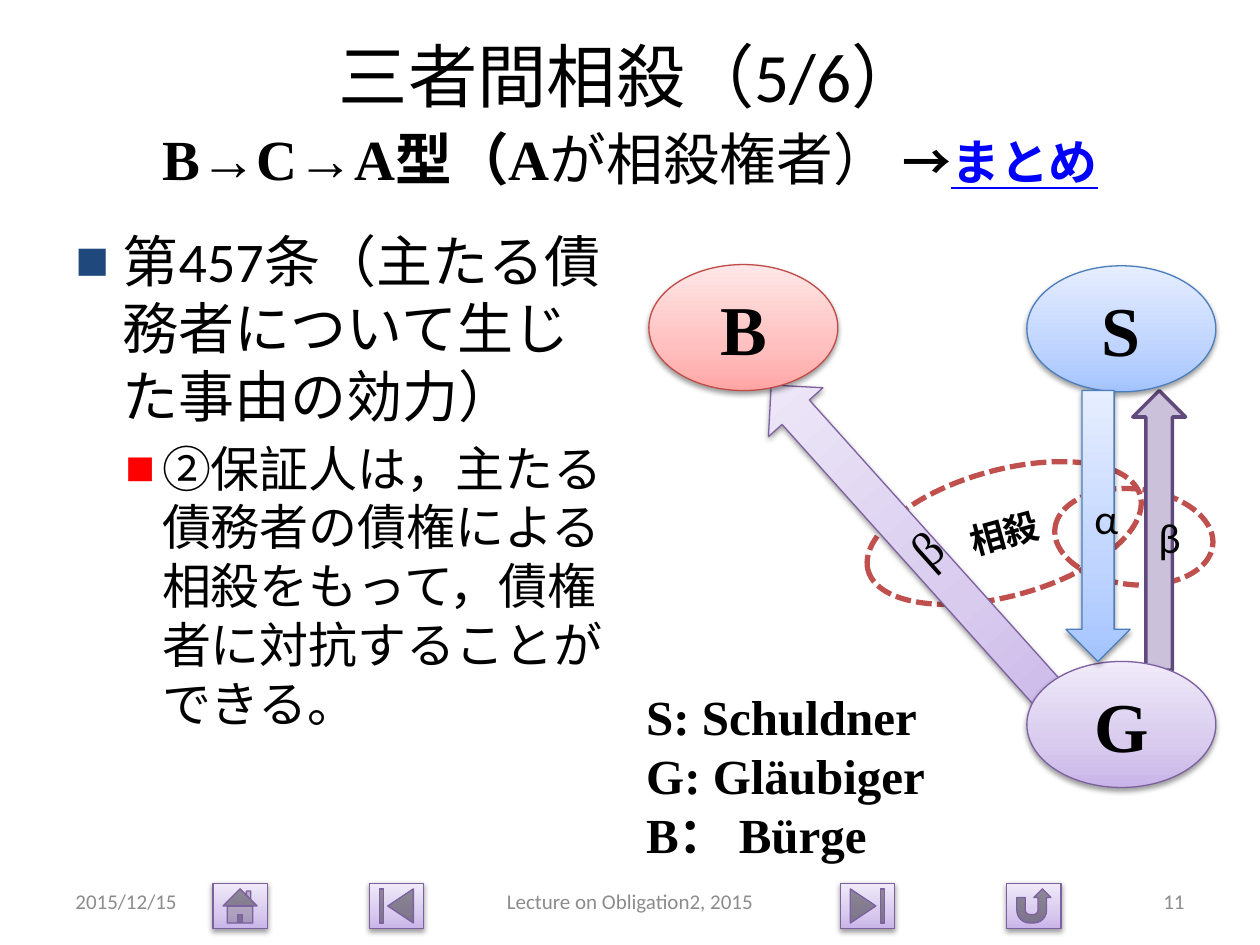
from pptx import Presentation
from pptx.dml.color import RGBColor
from pptx.enum.dml import MSO_LINE
from pptx.enum.shapes import MSO_SHAPE as Kind
from pptx.enum.text import MSO_ANCHOR as Anchor, PP_ALIGN as Align
from pptx.oxml.ns import qn
from pptx.util import Pt
from lxml.etree import SubElement

ROMAN, SANS, CJK = "Times New Roman", "Calibri", "Noto Sans CJK JP"
RED = (("FFA6A5", "FFC0BF", "FFE7E7"), "BF4C48")
BLUE = (("A4C4FF", "BFD4FF", "E6EEFF"), "4B7EBC")
LILAC = (("C9B5E8", "D8CBEE", "F0EAF9"), "7D60A0")


def tint(code):
    return RGBColor.from_string(code)


def write(para, text, size=12, font=SANS, color="000000", bold=False, under=False):
    run = para.add_run()
    run.text = text
    face = run.font
    face.size, face.name, face.bold = Pt(size), font, bold
    face.color.rgb = tint(color)
    if under:
        face.underline = True
    SubElement(face._element, qn("a:ea"), typeface=CJK)


class Deck:
    """Holds the style and the current slide."""

    def __init__(self):
        self.file = Presentation()
        self.file.slide_width, self.file.slide_height = Pt(720), Pt(540)
        self.slide = self.file.slides.add_slide(self.file.slide_layouts[6])

    def shape(self, kind, box, turn=0, label="", **form):
        item = self.slide.shapes.add_shape(kind, *map(Pt, box))
        item.rotation = turn
        item.shadow.inherit = False
        if label:
            frame = item.text_frame
            frame.word_wrap = True
            frame.vertical_anchor = Anchor.MIDDLE
            para = frame.paragraphs[0]
            para.alignment = Align.CENTER
            write(para, label, **form)
        return item

    def line(self, item, color, width):
        item.line.color.rgb = tint(color)
        item.line.width = Pt(width)

    def glow(self, kind, box, style, **form):
        item = self.shape(kind, box, **form)
        stops, edge = style
        item.fill.gradient()
        item.fill.gradient_angle = 90
        props = item._element.spPr
        bands = props.find(".//" + qn("a:gsLst"))
        for old in list(bands):
            bands.remove(old)
        for place, color in zip((0, 35, 100), stops):
            stop = SubElement(bands, qn("a:gs"), pos=str(place * 1000))
            SubElement(stop, qn("a:srgbClr"), val=color)
        self.line(item, edge, 0.75)
        cast = SubElement(props.find(qn("a:effectLst")), qn("a:outerShdw"),
                          blurRad=str(Pt(3.1)), dist=str(Pt(1.6)),
                          dir="5400000", rotWithShape="0")
        shade = SubElement(cast, qn("a:srgbClr"), val="000000")
        SubElement(shade, qn("a:alpha"), val="38000")

    def ring(self, box, turn, **form):
        item = self.shape(Kind.OVAL, box, turn, **form)
        item.fill.background()
        self.line(item, "C0504D", 3)
        item.line.dash_style = MSO_LINE.SQUARE_DOT

    def flat(self, kind, box, fill, edge, **form):
        item = self.shape(kind, box, **form)
        item.fill.solid()
        item.fill.fore_color.rgb = tint(fill)
        self.line(item, edge, 2)

    def text(self, box, anchor=Anchor.TOP):
        frame = self.slide.shapes.add_textbox(*map(Pt, box)).text_frame
        frame.word_wrap = True
        frame.vertical_anchor = anchor
        return frame

    def label(self, box, text, align):
        para = self.text(box, Anchor.MIDDLE).paragraphs[0]
        para.alignment = align
        write(para, text, color="8C8C8C")

    def bullet(self, para, text, size, color, left, hang):
        props = para._p.get_or_add_pPr()
        props.set("marL", str(Pt(left)))
        props.set("indent", str(Pt(-hang)))
        para.space_before = Pt(size * 0.2)
        para.line_spacing = Pt(size * 1.2)
        mark = SubElement(props, qn("a:buClr"))
        SubElement(mark, qn("a:srgbClr"), val=color)
        SubElement(props, qn("a:buFont"), typeface="Arial")
        SubElement(props, qn("a:buChar"), char="■")
        write(para, text, size)


def main():
    deck = Deck()
    for kind, left in ((Kind.ACTION_BUTTON_HOME, 121.7),
                       (Kind.ACTION_BUTTON_BEGINNING, 211),
                       (Kind.ACTION_BUTTON_END, 480.2),
                       (Kind.ACTION_BUTTON_RETURN, 575.3)):
        deck.glow(kind, (left, 504.7, 31, 26), LILAC)

    deck.ring((493.2, 268.6, 161.3, 72), -15.4,
              label="相殺", size=20, font=CJK, bold=True)
    deck.ring((602.6, 279.4, 90.7, 54.7), 6)
    deck.flat(Kind.UP_ARROW, (647.3, 223.2, 30.2, 159.8), "CCC1DA", "604A7B",
              label="β", size=24)
    deck.glow(Kind.UP_ARROW, (501.8, 188.6, 41.8, 245.5), LILAC,
              turn=-41.9, label="β", size=28, font=ROMAN)

    title = deck.text((36, 21.6, 648, 90), Anchor.MIDDLE).paragraphs[0]
    title.alignment = Align.CENTER
    title.line_spacing = Pt(43)
    write(title, "三者間相殺（5/6）", 39.6)
    title.add_line_break()
    write(title, "B→C→A型（A", 32.4, ROMAN, bold=True)
    write(title, "が相殺権者） ", 32.4)
    write(title, "→", 27.9, ROMAN, bold=True)
    write(title, "まとめ", 27.9, ROMAN, "0000FF", bold=True, under=True)

    body = deck.text((36, 126, 315.4, 356.4))
    deck.bullet(body.paragraphs[0], "第457条（主たる債務者について生じた事由の効力）",
                32, "1F497D", 27, 27)
    deck.bullet(body.add_paragraph(),
                "②保証人は，主たる債務者の債権による相殺をもって，債権者に対抗することができる。",
                28, "FF0000", 49.5, 21)

    deck.label((36, 500.4, 168, 28.8), "2015/12/15", Align.LEFT)
    deck.label((246, 500.4, 228, 28.8), "Lecture on Obligation2, 2015", Align.CENTER)
    deck.label((516, 500.4, 168, 28.8), "11", Align.RIGHT)

    for name, left, top, style in (("B", 370.8, 151.2, RED),
                                   ("S", 586.8, 151.9, BLUE),
                                   ("G", 586.8, 378, LILAC)):
        deck.glow(Kind.OVAL, (left, top, 108, 72), style,
                  label=name, size=40, font=ROMAN, bold=True)
    deck.glow(Kind.DOWN_ARROW, (609.1, 223.2, 36.7, 154.8), BLUE,
              label="α", size=24)

    key = deck.text((362.2, 388.8, 196.6, 108.7))
    for index, text in enumerate(("S: Schuldner", "G: Gläubiger", "B： Bürge")):
        para = key.add_paragraph() if index else key.paragraphs[0]
        para.line_spacing = Pt(33.6)
        write(para, text, 28, ROMAN, bold=True)
    deck.file.save("out.pptx")


if __name__ == "__main__":
    main()
